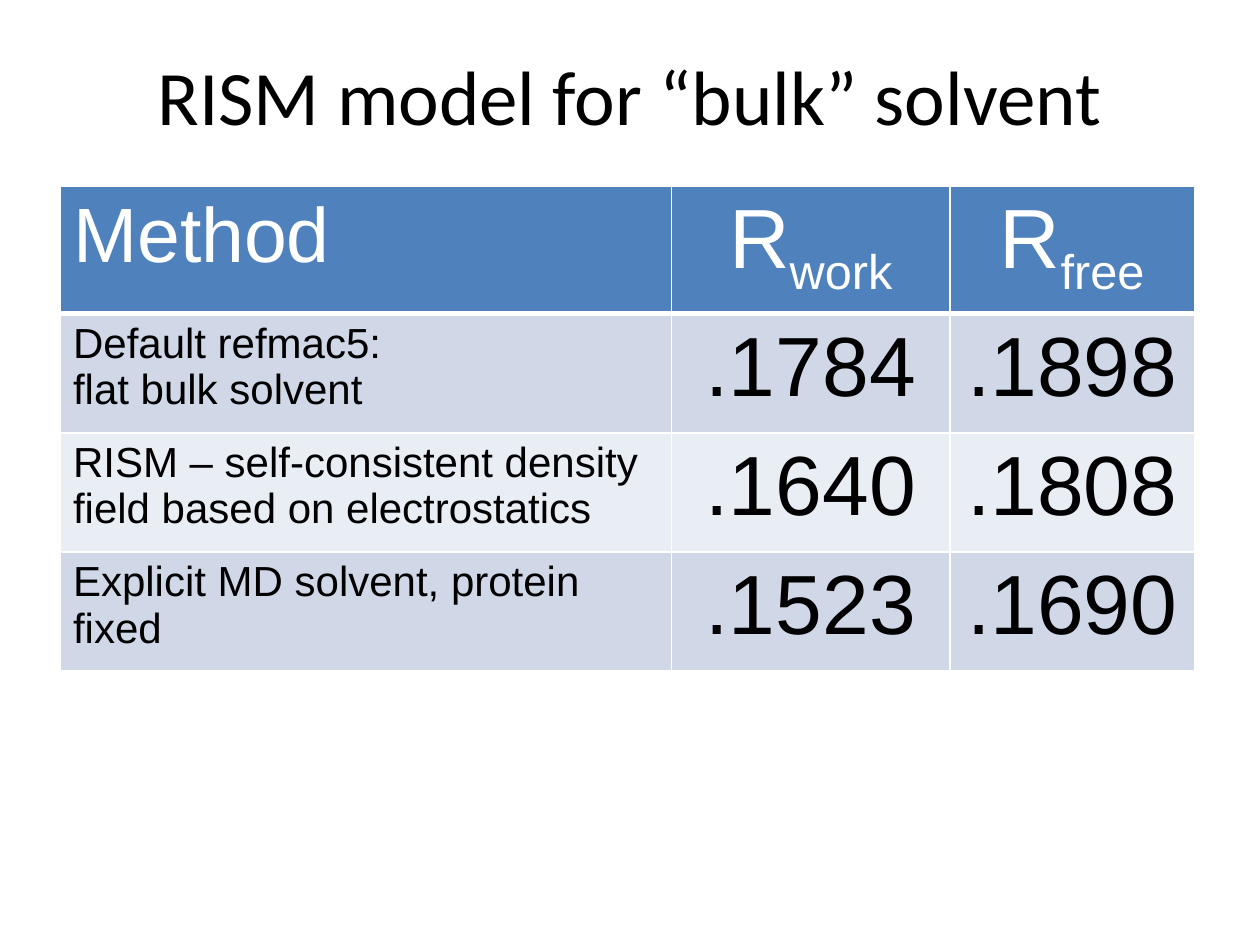
from lxml import etree
from pptx import Presentation
from pptx import util as u
from pptx.dml.color import RGBColor
from pptx.enum import text
from pptx.oxml.ns import qn

COLORS = {"black": "000000", "white": "FFFFFF", "header": "4F81BD",
          "odd": "D0D8E8", "even": "E9EDF4"}


def write(frame, content, size, font="Arial", color="black", centered=False):
    """Fill a text frame: each line is a paragraph, and what follows "_" is a subscript."""
    for index, line in enumerate(content.split("\n")):
        paragraph = frame.add_paragraph() if index else frame.paragraphs[0]
        paragraph.alignment = text.PP_ALIGN.CENTER if centered else text.PP_ALIGN.LEFT
        for level, part in enumerate(line.split("_")):
            run = paragraph.add_run()
            run.text = part
            run.font.name, run.font.size, run.font.bold = font, u.Pt(size), False
            run.font.color.rgb = RGBColor.from_string(COLORS[color])
            if level:
                run.font._element.set("baseline", "-25000")


def add_border(cell, side, width):
    line = etree.SubElement(cell._tc.get_or_add_tcPr(), qn(f"a:ln{side}"), w=str(u.Pt(width)))
    fill = etree.SubElement(line, qn("a:solidFill"))
    etree.SubElement(fill, qn("a:srgbClr"), val=COLORS["white"])


presentation = Presentation()
presentation.slide_width, presentation.slide_height = u.Inches(10), u.Inches(7.5)
slide = presentation.slides.add_slide(presentation.slide_layouts[6])

title = slide.shapes.add_textbox(u.Inches(0.5), u.Inches(0.13), u.Inches(9), u.Inches(1.25))
title.text_frame.word_wrap = True
title.text_frame.vertical_anchor = text.MSO_ANCHOR.MIDDLE
write(title.text_frame, "RISM model for “bulk” solvent", 44, font="Calibri", centered=True)

rows = [
    ("Method", "R_work", "R_free"),
    ("Default refmac5:\nflat bulk solvent", ".1784", ".1898"),
    ("RISM – self-consistent density field based on electrostatics", ".1640", ".1808"),
    ("Explicit MD solvent, protein fixed", ".1523", ".1690"),
]
column_widths = [4.85, 2.21, 1.94]
table = slide.shapes.add_table(len(rows), len(column_widths), u.Inches(0.48), u.Inches(1.48),
                               u.Inches(sum(column_widths)), u.Inches(3.78)).table
table.first_row = table.horz_banding = False
for column, width in zip(table.columns, column_widths):
    column.width = u.Inches(width)

for row_index, row in enumerate(rows):
    is_header = row_index == 0
    band = "header" if is_header else "odd" if row_index % 2 else "even"
    for column_index, content in enumerate(row):
        cell = table.cell(row_index, column_index)
        is_value = column_index > 0
        size = 48 if is_value else 44 if is_header else 24
        write(cell.text_frame, content, size, centered=is_value,
              color="white" if is_header else "black")
        for side in "LRTB":
            add_border(cell, side, 3 if is_header and side == "B" else 1)
        cell.fill.solid()
        cell.fill.fore_color.rgb = RGBColor.from_string(COLORS[band])

presentation.save("out.pptx")
